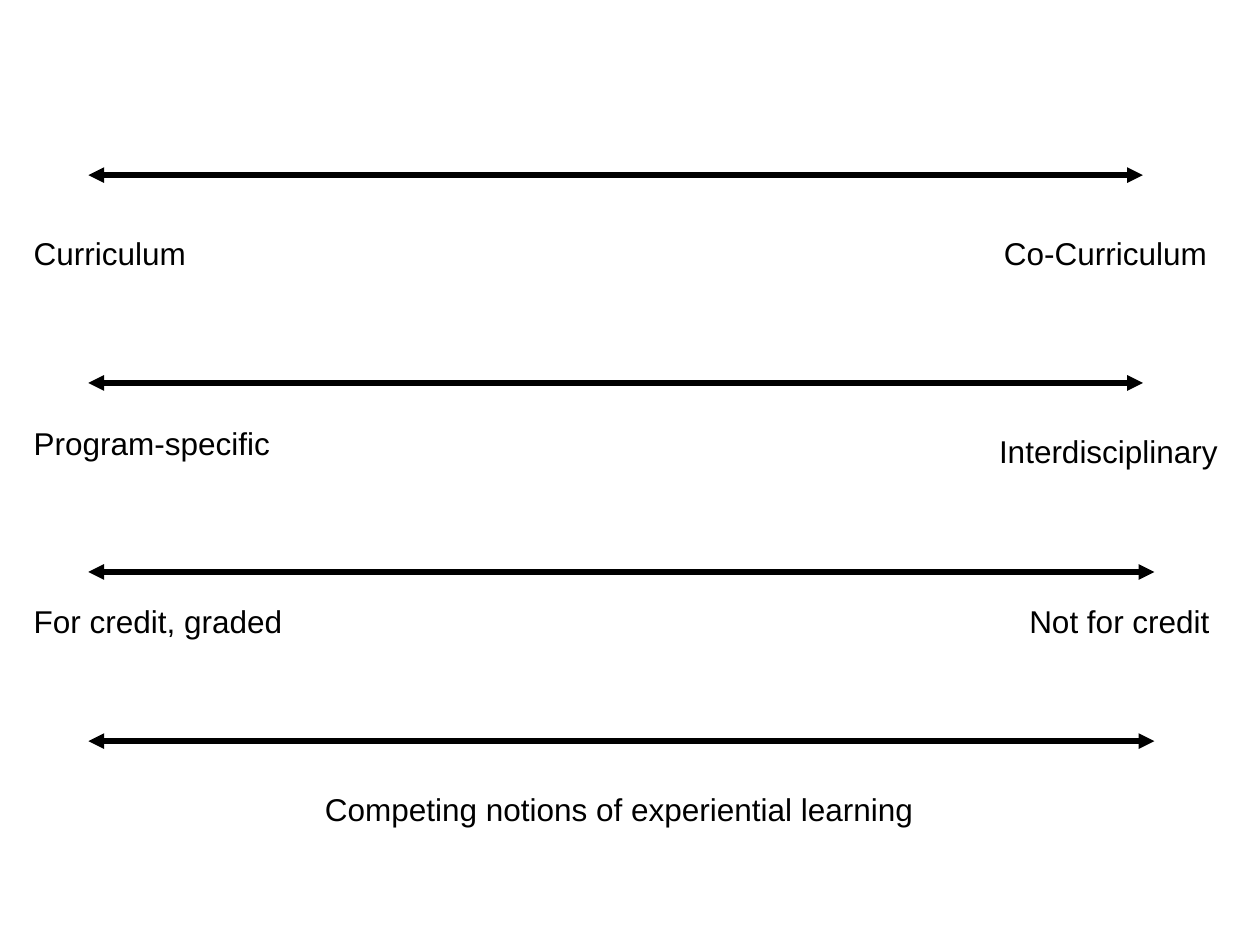
from lxml import etree
from pptx import Presentation
from pptx import util as u
from pptx.dml.color import RGBColor
from pptx.enum import shapes, text
from pptx.oxml.ns import qn


def color(hex_value):
    return RGBColor.from_string(hex_value)


class SpectrumSlide:
    font_name = "Arial"
    font_size = u.Pt(18)
    ink = "000000"
    line_width = u.Pt(3)

    def __init__(self, slide):
        self.slide = slide

    def double_arrow(self, left, right, y):
        arrow = self.slide.shapes.add_connector(
            shapes.MSO_CONNECTOR.STRAIGHT, u.Cm(left), u.Cm(y), u.Cm(right), u.Cm(y)
        )
        arrow.line.color.rgb = color(self.ink)
        arrow.line.width = self.line_width
        properties = arrow.line._get_or_add_ln()
        for end in ("a:headEnd", "a:tailEnd"):
            etree.SubElement(properties, qn(end), type="triangle")
        etree.SubElement(arrow._element.spPr, qn("a:effectLst"))

    def label(self, wording, left, top, width, height=1.02, wrap=True):
        box = self.slide.shapes.add_textbox(
            u.Cm(left), u.Cm(top), u.Cm(width), u.Cm(height)
        )
        frame = box.text_frame
        frame.word_wrap = wrap
        frame.auto_size = text.MSO_AUTO_SIZE.SHAPE_TO_FIT_TEXT
        paragraph = frame.paragraphs[0]
        paragraph.text = wording
        paragraph.font.name = self.font_name
        paragraph.font.size = self.font_size
        paragraph.font.color.rgb = color(self.ink)


def main():
    deck = Presentation()
    deck.slide_width = u.Cm(25.4)
    deck.slide_height = u.Cm(19.05)
    spectrum = SpectrumSlide(deck.slides.add_slide(deck.slide_layouts[6]))

    arrow_left, label_left = 1.78, 0.43
    for right, y in ((23.04, 3.53), (23.04, 7.72), (23.27, 11.53), (23.27, 14.94)):
        spectrum.double_arrow(arrow_left, right, y)

    spectrum.label("Curriculum", label_left, 4.6, 4.88)
    spectrum.label("Co-Curriculum", 19.99, 4.6, 5.28)
    spectrum.label("Program-specific", label_left, 8.43, 5.74, height=1.6)
    spectrum.label("Interdisciplinary", 19.89, 8.59, 5.28)
    spectrum.label("For credit, graded", label_left, 12.01, 7.06)
    spectrum.label("Not for credit", 20.5, 12.01, 4.29)
    spectrum.label(
        "Competing notions of experiential learning", 6.3, 15.8, 12.47, wrap=False
    )

    deck.save("out.pptx")


if __name__ == "__main__":
    main()
